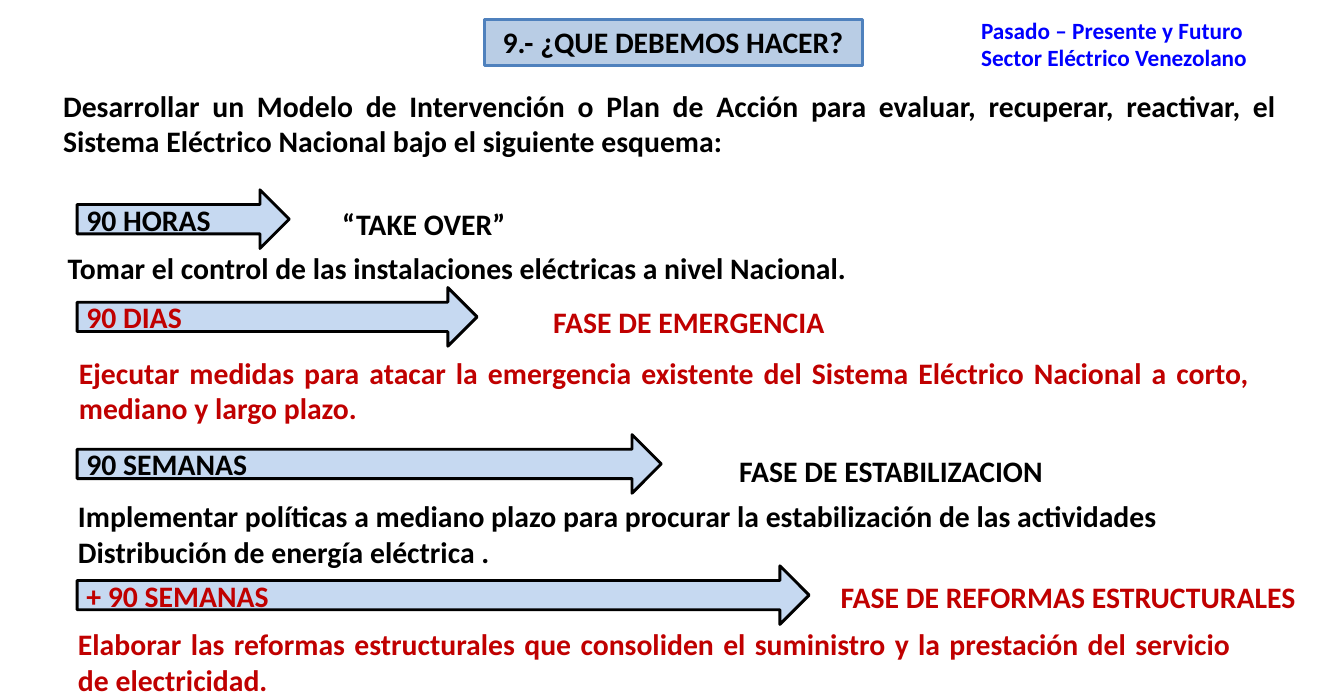
import pptx
import pptx.dml.color
import pptx.enum.shapes
import pptx.enum.text
import pptx.util

Inches = pptx.util.Inches
Align = pptx.enum.text.PP_ALIGN
Preset = pptx.enum.shapes.MSO_SHAPE

BLACK, RED, BLUE = "000000", "C00000", "0000FF"
LINE_HEIGHT, TWO_LINE_HEIGHT = 0.49, 0.88
ARROW_LEFT, ARROW_HEIGHT = 0.83, 0.63

# Per phase: colour, arrow (text, top, width), name (text, left, top, width),
# task (text, left, top, width, height, alignment)
PHASES = [
    (BLACK, ("90 HORAS", 2.04, 2.28),
     ("“TAKE OVER”", 3.58, 2.16, 2.05),
     ("Tomar el control de las instalaciones eléctricas a nivel Nacional.",
      0.63, 2.63, 11.18, LINE_HEIGHT, Align.LEFT)),
    (RED, ("90 DIAS", 3.09, 4.3),
     ("FASE DE EMERGENCIA", 5.85, 3.22, 3.67),
     ("Ejecutar medidas para atacar la emergencia existente del Sistema "
      "Eléctrico Nacional a corto, mediano y largo plazo.",
      0.75, 3.76, 12.8, TWO_LINE_HEIGHT, Align.JUSTIFY)),
    (BLACK, ("90 SEMANAS", 4.67, 6.28),
     ("FASE DE ESTABILIZACION", 7.85, 4.82, 3.8),
     ("Implementar políticas a mediano plazo para procurar la estabilización "
      "de las actividades Distribución de energía eléctrica .",
      0.74, 5.3, 12.61, TWO_LINE_HEIGHT, Align.LEFT)),
    (RED, ("+ 90 SEMANAS", 6.08, 7.87),
     ("FASE DE REFORMAS ESTRUCTURALES", 8.94, 6.17, 5.51),
     ("Elaborar las reformas estructurales que consoliden el suministro y la "
      "prestación del servicio de electricidad.",
      0.74, 6.68, 12.61, TWO_LINE_HEIGHT, Align.JUSTIFY)),
]


def rgb(color):
    return pptx.dml.color.RGBColor.from_string(color)


def write_text(shape, text, color, size=23, alignment=Align.LEFT):
    shape.text_frame.text = text
    for paragraph in shape.text_frame.paragraphs:
        paragraph.alignment = alignment
        for run in paragraph.runs:
            run.font.name = "Calibri"
            run.font.size = pptx.util.Pt(size)
            run.font.bold = True
            run.font.color.rgb = rgb(color)


def add_text(slide, text, left, top, width, height=LINE_HEIGHT, color=BLACK,
             size=23, alignment=Align.LEFT, wrap=True):
    box = slide.shapes.add_textbox(
        Inches(left), Inches(top), Inches(width), Inches(height))
    write_text(box, text, color, size, alignment)
    box.text_frame.word_wrap = wrap
    box.text_frame.auto_size = pptx.enum.text.MSO_AUTO_SIZE.SHAPE_TO_FIT_TEXT


def add_filled_shape(slide, preset, left, top, width, height, fill, line):
    shape = slide.shapes.add_shape(
        preset, Inches(left), Inches(top), Inches(width), Inches(height))
    shape.shadow.inherit = False
    shape.fill.solid()
    shape.fill.fore_color.rgb = rgb(fill)
    shape.line.color.rgb = rgb(line)
    shape.line.width = pptx.util.Pt(2.25)
    return shape


def add_title(slide, text):
    title = add_filled_shape(slide, Preset.RECTANGLE, 5.21, 0.21, 4.06,
                             LINE_HEIGHT, "B9CDE5", "4F81BD")
    write_text(title, text, BLACK, alignment=Align.CENTER)
    title.text_frame.vertical_anchor = pptx.enum.text.MSO_ANCHOR.TOP


def add_phase_arrow(slide, text, top, width, color):
    arrow = add_filled_shape(slide, Preset.RIGHT_ARROW, ARROW_LEFT, top, width,
                             ARROW_HEIGHT, "C6D9F1", BLACK)
    write_text(arrow, text, color)
    arrow.text_frame.vertical_anchor = pptx.enum.text.MSO_ANCHOR.MIDDLE


def main():
    presentation = pptx.Presentation()
    presentation.slide_width = Inches(14.45)
    presentation.slide_height = Inches(7.5)
    slide = presentation.slides.add_slide(presentation.slide_layouts[6])

    add_title(slide, "9.- ¿QUE DEBEMOS HACER?")
    add_text(slide, "Pasado – Presente y Futuro\nSector Eléctrico Venezolano",
             10.45, 0.12, 3.1, 0.71, BLUE, size=18, wrap=False)
    add_text(slide, "Desarrollar un Modelo de Intervención o Plan de Acción para "
             "evaluar, recuperar, reactivar, el Sistema Eléctrico Nacional bajo "
             "el siguiente esquema:",
             0.58, 0.89, 13.26, TWO_LINE_HEIGHT, alignment=Align.JUSTIFY)

    for color, arrow, name, (task, left, top, width, height, alignment) in PHASES:
        add_phase_arrow(slide, *arrow, color)
        add_text(slide, *name, color=color)
        add_text(slide, task, left, top, width, height, color,
                 alignment=alignment)

    presentation.save("out.pptx")


if __name__ == "__main__":
    main()
